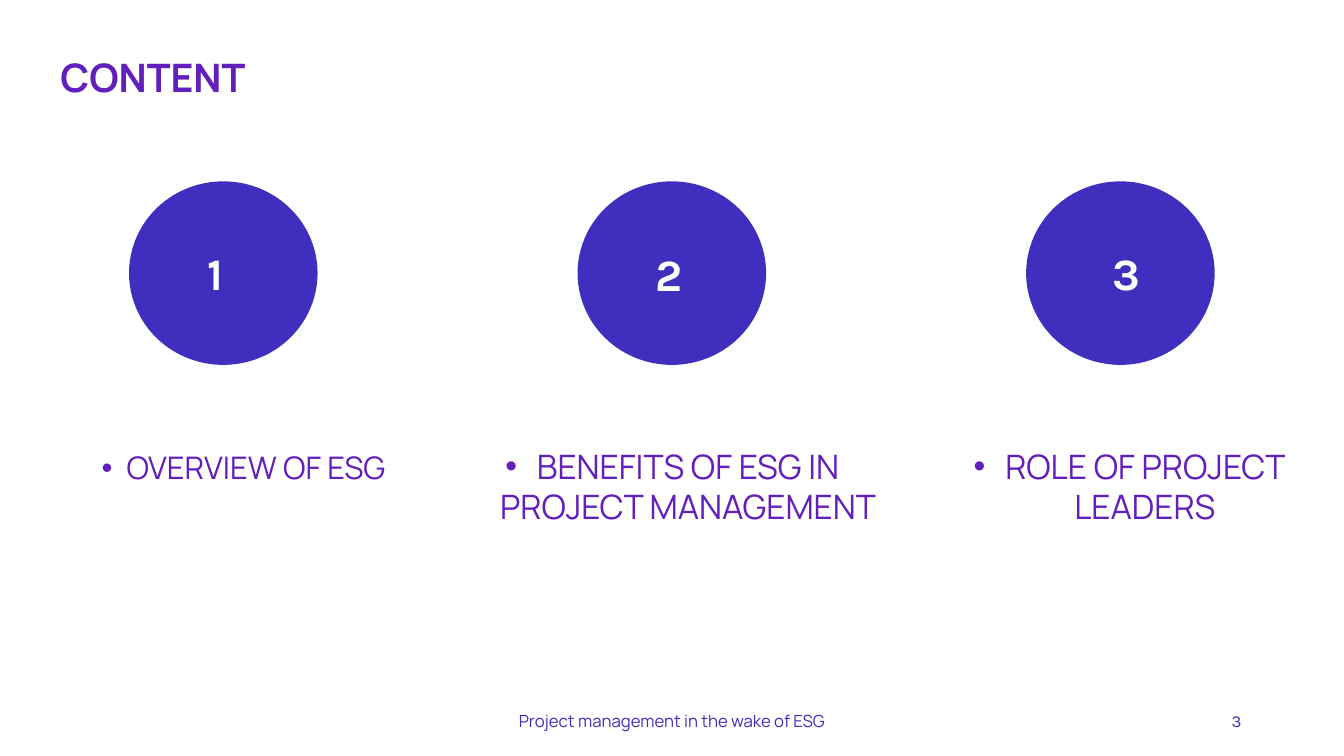
from dataclasses import dataclass

from lxml.etree import SubElement
from pptx import Presentation
from pptx.dml.color import RGBColor as RGB
from pptx.enum.shapes import MSO_SHAPE as SHAPE
from pptx.enum.text import MSO_ANCHOR as ANCHOR, MSO_AUTO_SIZE as AUTO, PP_ALIGN as ALIGN
from pptx.oxml.ns import qn
from pptx.util import Pt


@dataclass(frozen=True)
class Theme:
    """Colours, fonts and type sizes of the slide."""
    purple: RGB = RGB(0x62, 0x1F, 0xBB)
    indigo: RGB = RGB(0x40, 0x2F, 0xBF)
    white: RGB = RGB(0xFF, 0xFF, 0xFF)
    text_font: str = "Manrope"
    number_font: str = "Karla"
    title: float = 28
    number: float = 32
    topic: float = 24
    first_topic: float = 22.2
    footer: float = 12


THEME = Theme()


def place(sp, box):
    """Move a shape to a box of left, top, width and height in points."""
    sp.left, sp.top, sp.width, sp.height = (Pt(v) for v in box)


def write(sp, text, size, color, font=THEME.text_font, bold=False,
          align=ALIGN.LEFT, anchor=ANCHOR.TOP, spacing=1.0, indent=None):
    """Write one formatted paragraph, bulleted when an indent is given."""
    tf = sp.text_frame
    tf.word_wrap = True
    tf.auto_size = AUTO.NONE
    tf.vertical_anchor = anchor
    p = tf.paragraphs[0]
    p.alignment = align
    p.line_spacing = spacing
    p.space_before = Pt(0)
    if indent is not None:
        pPr = p._p.get_or_add_pPr()
        pPr.set("marL", str(Pt(indent)))
        pPr.set("indent", str(-Pt(indent)))
        SubElement(pPr, qn("a:buFont")).set("typeface", "Arial")
        SubElement(pPr, qn("a:buChar")).set("char", "•")
    r = p.add_run()
    r.text = text
    r.font.size = Pt(size)
    r.font.name = font
    r.font.bold = bold
    r.font.color.rgb = color


def add_text(slide, box, text, size, color, **style):
    """Add a text box with one paragraph."""
    sp = slide.shapes.add_textbox(*(Pt(v) for v in box))
    write(sp, text, size, color, **style)


def add_title(slide, box, text):
    """Fill the title placeholder."""
    sp = slide.shapes.title
    place(sp, box)
    write(sp, text, THEME.title, THEME.purple, bold=True,
          anchor=ANCHOR.MIDDLE, spacing=0.9)


def add_badge(slide, box, number, dx, dy):
    """Draw a circle with its number set at an offset inside it."""
    left, top, width, height = box
    sp = slide.shapes.add_shape(SHAPE.OVAL, *(Pt(v) for v in box))
    sp.shadow.inherit = False
    sp.fill.solid()
    sp.fill.fore_color.rgb = THEME.indigo
    sp.line.color.rgb = THEME.indigo
    sp.line.width = Pt(1.5)
    add_text(slide, (left + dx, top + dy, 38, 46), str(number), THEME.number,
             THEME.white, font=THEME.number_font, bold=True)


def add_badges(slide, box, offsets):
    """Spread the numbered circles evenly from edge to edge of the box."""
    left, top, width, height = box
    diameter = 133.2
    step = (width - diameter) / (len(offsets) - 1)
    for i, (dx, dy) in enumerate(offsets):
        add_badge(slide, (left + i * step, top, diameter, height), i + 1, dx, dy)


def add_topics(slide, box):
    """Place the three bulleted topics, the first in the body placeholder."""
    left, top, width, height = box
    body = slide.placeholders[1]
    place(body, (left, top + 5, 240, 43))
    write(body, "OVERVIEW OF ESG", THEME.first_topic, THEME.purple,
          align=ALIGN.CENTER, spacing=0.9, indent=18)
    topics = (
        (258.5, 335.5, "BENEFITS OF ESG IN PROJECT MANAGEMENT"),
        (width - 281, 281, "ROLE OF PROJECT LEADERS"),
    )
    for dx, topic_width, text in topics:
        add_text(slide, (left + dx, top, topic_width, height), text, THEME.topic,
                 THEME.purple, align=ALIGN.CENTER, indent=22.5)


def add_footer(slide, box, text, number):
    """Place the footer text on the left and the page number on the right."""
    left, top, width, height = box
    add_text(slide, (left, top, 324, height), text, THEME.footer, THEME.indigo,
             align=ALIGN.CENTER, anchor=ANCHOR.MIDDLE)
    add_text(slide, (left + width - 216, top, 216, height), number, THEME.footer,
             THEME.indigo, font=THEME.number_font, align=ALIGN.RIGHT,
             anchor=ANCHOR.MIDDLE)


def main():
    """Build and save the content slide."""
    prs = Presentation()
    prs.slide_width, prs.slide_height = Pt(960), Pt(540)
    slide = prs.slides.add_slide(prs.slide_layouts[1])
    add_title(slide, (36, 24.5, 689, 64.8), "CONTENT")
    add_topics(slide, (54, 315, 893, 65.5))
    add_badges(slide, (92.9, 130.3, 774, 129.6), ((48, 42), (47.5, 42.5), (54, 42)))
    add_footer(slide, (318, 500.4, 576, 28.8),
               "Project management in the wake of ESG", "3")
    prs.save("out.pptx")


if __name__ == "__main__":
    main()
